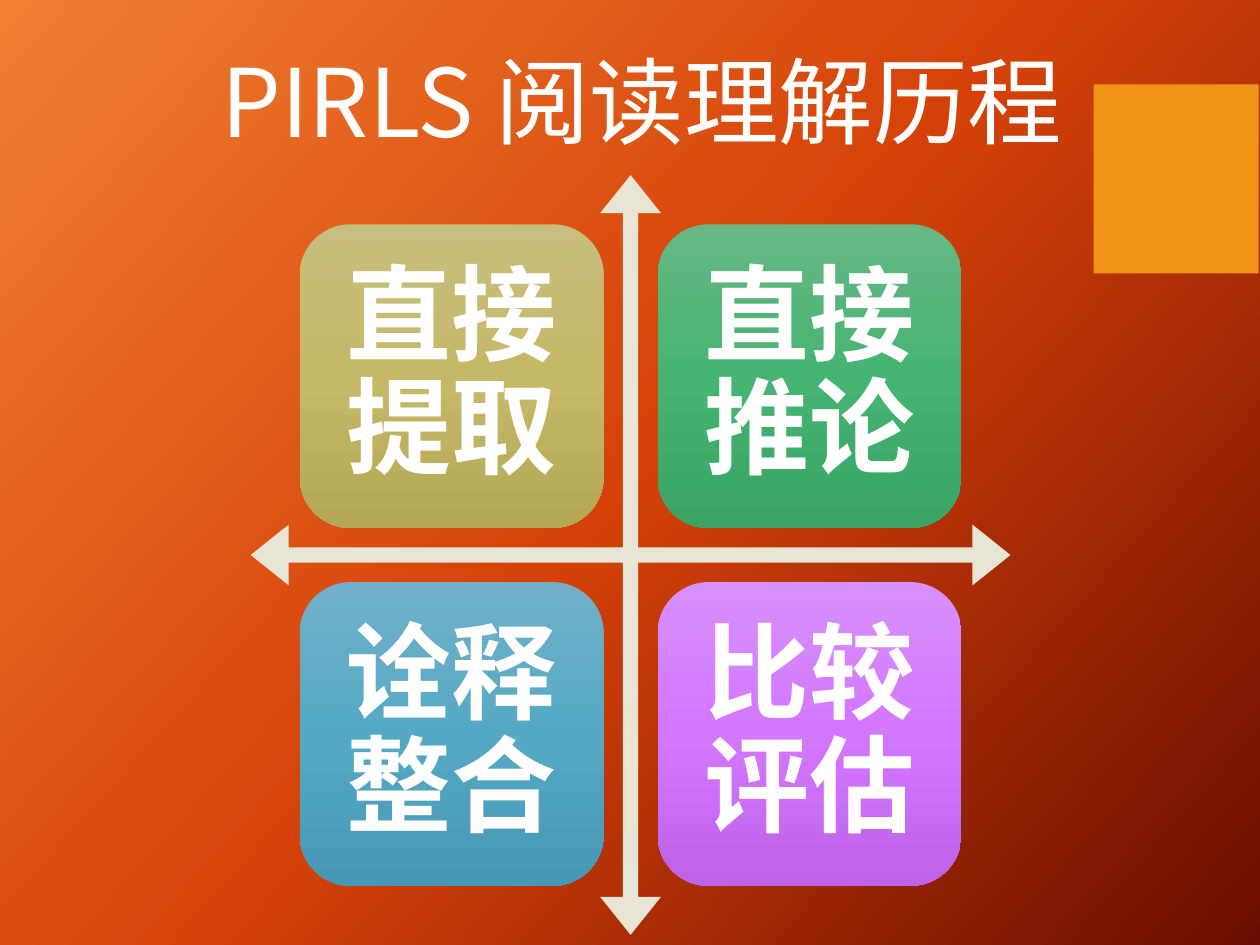
from lxml.etree import SubElement
from pptx import Presentation
from pptx.dml.color import RGBColor
from pptx.enum.shapes import MSO_SHAPE
from pptx.enum.text import MSO_ANCHOR, MSO_AUTO_SIZE, PP_ALIGN
from pptx.oxml.ns import qn
from pptx.util import Inches, Pt

COLORS = {
    "background": ("F18031", "D54209", "6A0D00"),
    "accent": "F09415",
    "arrows": "E9E5D4",
    "text": "FFFFFF",
    "sand": ("C8BE7F", "C5B867", "B4A756"),
    "green": ("67B884", "46B472", "3AA464"),
    "blue": ("71B0C8", "55A9C5", "4798B4"),
    "violet": ("D790FB", "D377FF", "BE62EA"),
}


class SlideBuilder:
    font = "Noto Sans CJK TC"

    def __init__(self, slide):
        self.s = slide

    def gradient(self, fill, element, colors, angle):
        """Three even stops; the angle is clockwise in degrees."""
        fill.gradient()
        fill.gradient_angle = 360 - angle
        stops = element.find(".//" + qn("a:gsLst"))
        for stop in list(stops):
            stops.remove(stop)
        for i, color in enumerate(colors):
            stop = SubElement(stops, qn("a:gs"), pos=str(i * 50000))
            SubElement(stop, qn("a:srgbClr"), val=color)

    def background(self, colors, angle):
        self.gradient(self.s.background.fill, self.s.element, colors, angle)

    def shape(self, kind, x, y, w, h, color, adjustments=()):
        sp = self.s.shapes.add_shape(kind, Inches(x), Inches(y), Inches(w), Inches(h))
        sp.shadow.inherit = False
        sp.line.fill.background()
        if isinstance(color, str):
            sp.fill.solid()
            sp.fill.fore_color.rgb = RGBColor.from_string(color)
        else:
            self.gradient(sp.fill, sp.element, color, 90)
        for i, value in enumerate(adjustments):
            sp.adjustments[i] = value
        return sp

    def run(self, p, text, size, bold=False):
        r = p.add_run()
        r.text = text
        r.font.size = Pt(size)
        r.font.bold = bold
        r.font.name = self.font
        r.font.color.rgb = RGBColor.from_string(COLORS["text"])
        SubElement(r.font._element, qn("a:ea"), typeface=self.font)

    def card(self, x, y, size, text, colors):
        sp = self.shape(MSO_SHAPE.ROUNDED_RECTANGLE, x, y, size, size, colors)
        tf = sp.text_frame
        tf.word_wrap = True
        tf.vertical_anchor = MSO_ANCHOR.MIDDLE
        tf.margin_left = tf.margin_right = Inches(0.25)
        tf.margin_top = tf.margin_bottom = Inches(0.25)
        p = tf.paragraphs[0]
        p.alignment = PP_ALIGN.CENTER
        p.line_spacing = 0.9
        self.run(p, text, 60, bold=True)

    def title(self, x, y, w, h, text):
        box = self.s.shapes.add_textbox(Inches(x), Inches(y), Inches(w), Inches(h))
        tf = box.text_frame
        tf.word_wrap = False
        tf.auto_size = MSO_AUTO_SIZE.SHAPE_TO_FIT_TEXT
        self.run(tf.paragraphs[0], text, 54)


def main():
    prs = Presentation()
    prs.slide_width, prs.slide_height = Inches(10), Inches(7.5)
    slide = SlideBuilder(prs.slides.add_slide(prs.slide_layouts[6]))

    # Background and accent block
    slide.background(COLORS["background"], 42)
    slide.shape(MSO_SHAPE.RECTANGLE, 8.68, 0.67, 1.31, 1.5, COLORS["accent"])

    # Crossed arrows
    slide.shape(MSO_SHAPE.QUAD_ARROW, 1.99, 1.39, 6.03, 6.03,
                COLORS["arrows"], (0.02, 0.04, 0.05))

    # Four reading processes, row by row
    left, top, size, pitch = 2.38, 1.78, 2.41, 2.84
    cards = [("直接提取", "sand"), ("直接推论", "green"),
             ("诠释整合", "blue"), ("比较评估", "violet")]
    for i, (text, color) in enumerate(cards):
        row, col = divmod(i, 2)
        slide.card(left + col * pitch, top + row * pitch, size, text, COLORS[color])

    # Title
    slide.title(1.66, 0.29, 7.14, 1.01, "PIRLS 阅读理解历程")

    prs.save("out.pptx")


if __name__ == "__main__":
    main()
